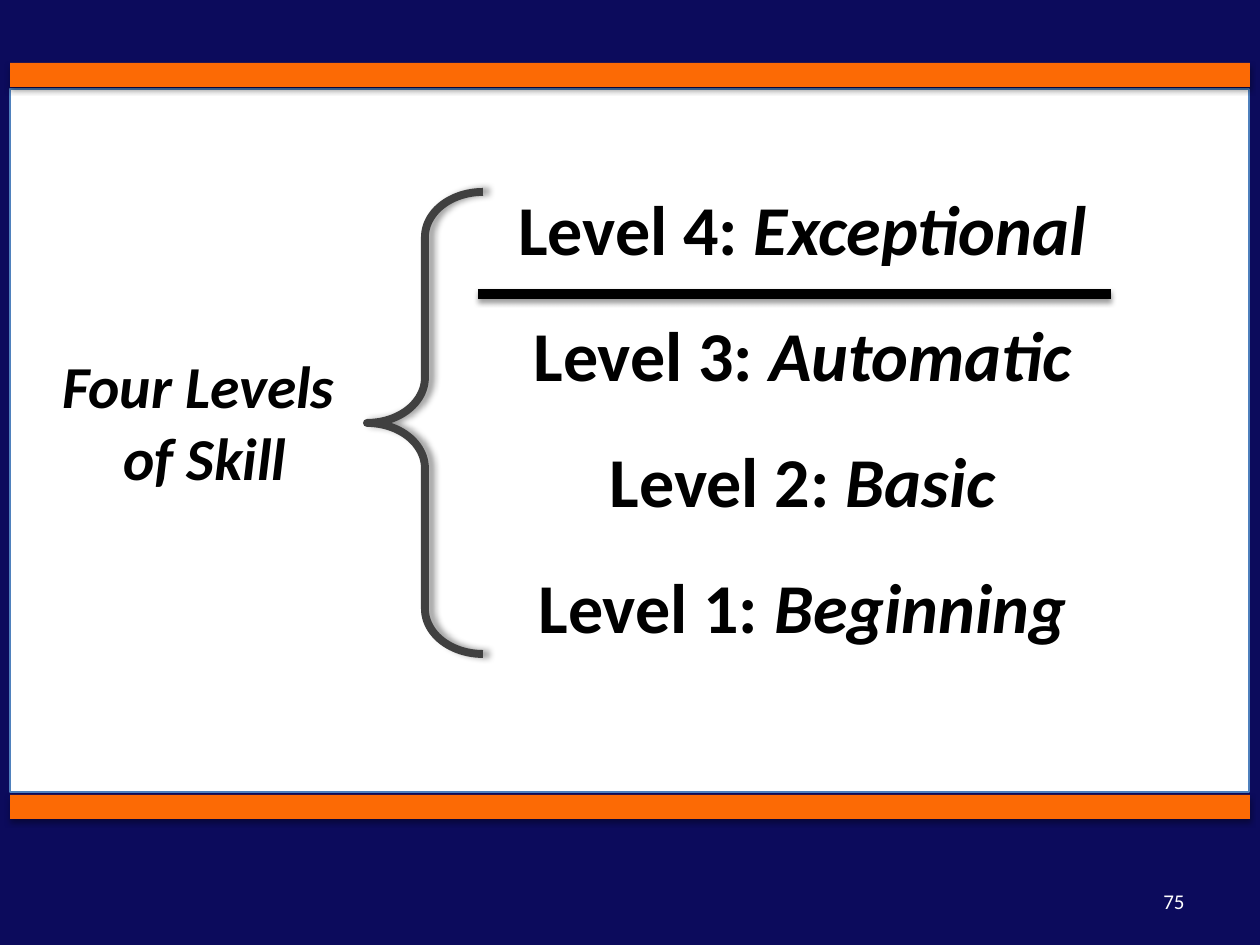
from lxml.etree import SubElement
from pptx import Presentation
from pptx.dml.color import RGBColor
from pptx.enum.shapes import MSO_CONNECTOR, MSO_SHAPE
from pptx.enum.text import MSO_ANCHOR, PP_ALIGN
from pptx.oxml.ns import qn
from pptx.util import Emu, Pt

NAVY = RGBColor(0x0C, 0x0B, 0x5C)
ORANGE = RGBColor(0xFC, 0x6A, 0x05)
BLUE = RGBColor(0x4F, 0x81, 0xBD)
GRAY = RGBColor(0x40, 0x40, 0x40)
WHITE = RGBColor(0xFF, 0xFF, 0xFF)
BLACK = RGBColor(0, 0, 0)

FONT = "Calibri"
HEADING = "Four Levels \vof Skill"
LEVELS = ["Exceptional", "Automatic", "Basic", "Beginning"]
PAGE_NUMBER = "75"
BAR_TOPS = (63, 795)


def px(length):
    return Emu(round(length * 914400 / 126))


def add_shadow(shape, opacity, blur, distance, angle):
    """Blur and distance are points, opacity is percent, angle is degrees."""
    properties = shape._element.spPr
    for old in properties.findall(qn("a:effectLst")):
        properties.remove(old)
    effects = SubElement(properties, qn("a:effectLst"))
    shadow = SubElement(effects, qn("a:outerShdw"), blurRad=str(Pt(blur)),
                        dist=str(Pt(distance)), dir=str(angle * 60000),
                        rotWithShape="0")
    color = SubElement(shadow, qn("a:srgbClr"), val=str(BLACK))
    SubElement(color, qn("a:alpha"), val=str(opacity * 1000))


def add_shape(slide, kind, box, fill=None, line=None, width=1):
    shape = slide.shapes.add_shape(kind, *map(px, box))
    shape.shadow.inherit = False
    if fill is None:
        shape.fill.background()
    else:
        shape.fill.solid()
        shape.fill.fore_color.rgb = fill
    if line is None:
        shape.line.fill.background()
    else:
        shape.line.color.rgb = line
        shape.line.width = Pt(width)
    return shape


def add_text(slide, box, paragraphs, size, color=BLACK, bold=False,
             align=PP_ALIGN.CENTER, anchor=MSO_ANCHOR.TOP, wrap=True,
             space_after=0, indent=0):
    """Each paragraph is a list of (text, italic) runs; \\v breaks a line."""
    frame = slide.shapes.add_textbox(*map(px, box)).text_frame
    frame.word_wrap = wrap
    frame.vertical_anchor = anchor
    for index, runs in enumerate(paragraphs):
        paragraph = frame.paragraphs[0] if index == 0 else frame.add_paragraph()
        paragraph.alignment = align
        paragraph.space_after = Pt(space_after)
        if indent:
            properties = paragraph._p.get_or_add_pPr()
            properties.set("marL", str(px(indent)))
            properties.set("indent", "0")
        for text, italic in runs:
            for number, part in enumerate(text.split("\v")):
                if number:
                    paragraph.add_line_break()
                run = paragraph.add_run()
                run.text = part
                run.font.name = FONT
                run.font.size = Pt(size)
                run.font.bold = bold
                run.font.italic = italic
                run.font.color.rgb = color


def main():
    presentation = Presentation()
    presentation.slide_width, presentation.slide_height = px(1260), px(945)
    slide = presentation.slides.add_slide(presentation.slide_layouts[6])
    slide.background.fill.solid()
    slide.background.fill.fore_color.rgb = NAVY

    top_bar, bottom_bar = BAR_TOPS
    rectangle = MSO_SHAPE.RECTANGLE
    bar = add_shape(slide, rectangle, (10, bottom_bar, 1240, 24), ORANGE)
    add_shadow(bar, 35, 3.1, 1.8, 90)
    add_shape(slide, rectangle, (10, 89, 1239, 703), WHITE, BLUE)
    bar = add_shape(slide, rectangle, (10, top_bar, 1240, 24), ORANGE)
    add_shadow(bar, 35, 3.1, 1.8, 90)

    add_text(slide, (903, 876, 294, 50), [[(PAGE_NUMBER, False)]], 12, WHITE,
             align=PP_ALIGN.RIGHT, anchor=MSO_ANCHOR.MIDDLE)

    levels = [[(f"Level {len(LEVELS) - index}: ", False), (name, True)]
              for index, name in enumerate(LEVELS)]
    add_text(slide, (294, 179, 987, 479), levels, 40, bold=True,
             space_after=24, indent=30)

    divider = slide.shapes.add_connector(
        MSO_CONNECTOR.STRAIGHT, px(478), px(294), px(1111), px(294))
    divider.line.color.rgb = BLACK
    divider.line.width = Pt(6)
    add_shadow(divider, 38, 3.1, 1.6, 90)

    add_text(slide, (47, 343, 316, 158), [[(HEADING, True)]], 34, bold=True,
             wrap=False)

    brace = add_shape(slide, MSO_SHAPE.LEFT_BRACE, (367, 192, 116, 462),
                      line=GRAY, width=4.5)
    brace.adjustments[0] = 0.39
    brace.adjustments[1] = 0.5
    add_shadow(brace, 40, 4, 3, 0)

    presentation.save("out.pptx")


if __name__ == "__main__":
    main()
